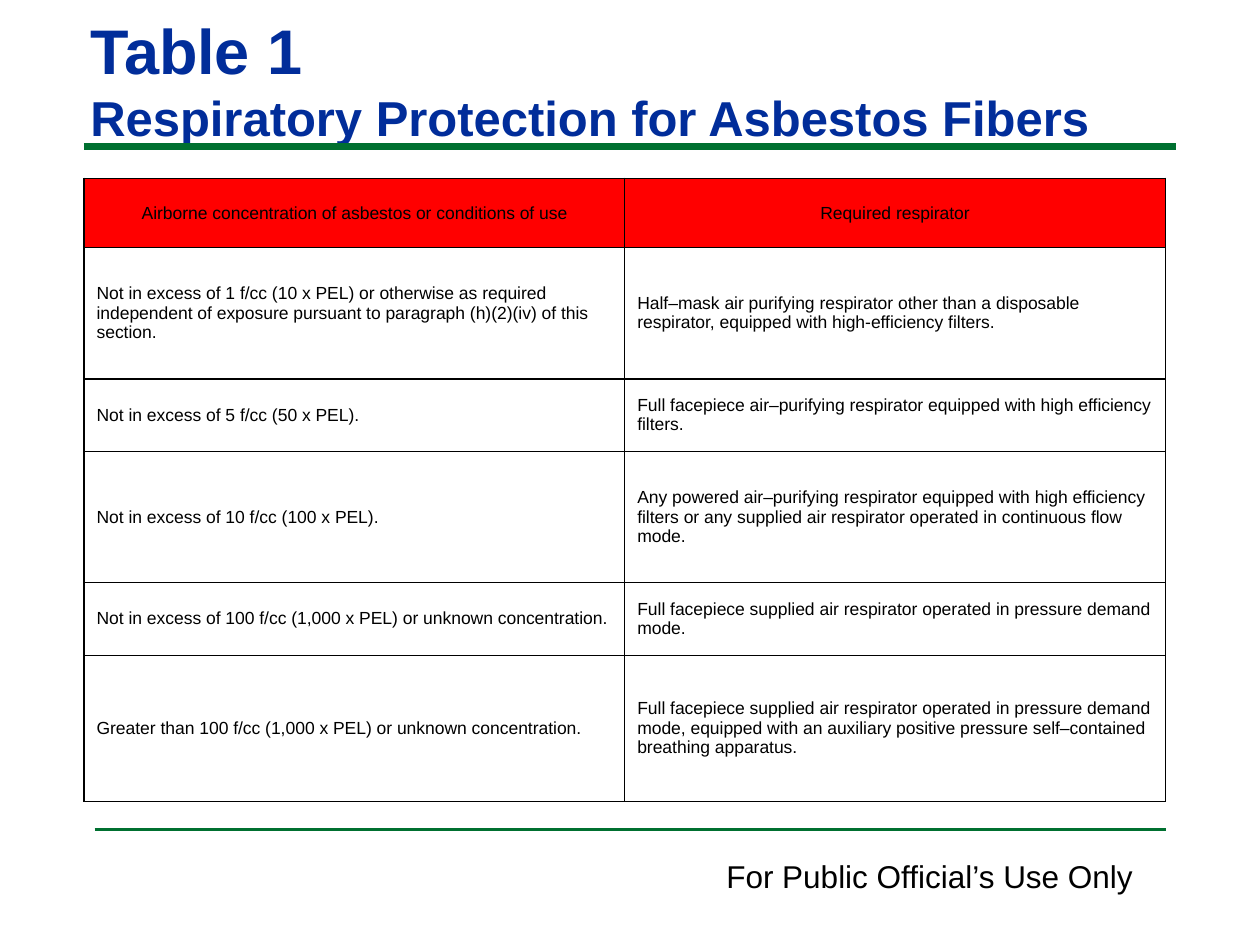
from lxml import etree
from pptx import Presentation
from pptx.dml.color import RGBColor
from pptx.enum import shapes, text
from pptx.oxml import ns
from pptx.util import Pt

THEME = {
    "font": "Arial",
    "green": "007030", "blue": "012D9A", "black": "000000",
    "red": "FF0000", "white": "FFFFFF",
    "head": 36, "sub": 28, "foot": 18, "cell": 10,
}
TITLE = [("Table 1", "head"), ("Respiratory Protection for Asbestos Fibers", "sub")]
FOOTER = "For Public Official’s Use Only"
ROWS = [
    ("Airborne concentration of asbestos or conditions of use",
     "Required respirator"),
    ("Not in excess of 1 f/cc (10 x PEL) or otherwise as required independent "
     "of exposure pursuant to paragraph (h)(2)(iv) of this section.",
     "Half–mask air purifying respirator other than a disposable respirator, "
     "equipped with high-efficiency filters."),
    ("Not in excess of 5 f/cc (50 x PEL).",
     "Full facepiece air–purifying respirator equipped with high efficiency filters."),
    ("Not in excess of 10 f/cc (100 x PEL).",
     "Any powered air–purifying respirator equipped with high efficiency filters "
     "or any supplied air respirator operated in continuous flow mode."),
    ("Not in excess of 100 f/cc (1,000 x PEL) or unknown concentration.",
     "Full facepiece supplied air respirator operated in pressure demand mode."),
    ("Greater than 100 f/cc (1,000 x PEL) or unknown concentration.",
     "Full facepiece supplied air respirator operated in pressure demand mode, "
     "equipped with an auxiliary positive pressure self–contained breathing apparatus."),
]
HEIGHTS = [39.5, 75, 41.5, 75, 41.5, 83.5]
RULES = [(48, 672, 84, 4), (54, 666, 474, 2)]
LEFT, TOP, WIDTH = 48, 102, 618


def color(name):
    return RGBColor.from_string(THEME[name])


def style(font, size, tone, bold=False):
    font.name = THEME["font"]
    font.size = Pt(THEME[size])
    font.color.rgb = color(tone)
    font.bold = bold


def add_rule(slide, start, end, y, weight):
    rule = slide.shapes.add_connector(
        shapes.MSO_CONNECTOR.STRAIGHT, Pt(start), Pt(y), Pt(end), Pt(y))
    rule.line.color.rgb = color("green")
    rule.line.width = Pt(weight)
    etree.SubElement(rule._element.spPr, ns.qn("a:effectLst"))


def set_title(slide):
    title = slide.shapes.title
    title.left, title.top, title.width, title.height = map(Pt, (LEFT, 6, 648, 77.5))
    frame = title.text_frame
    frame.auto_size = text.MSO_AUTO_SIZE.NONE
    frame.vertical_anchor = text.MSO_ANCHOR.BOTTOM
    frame.margin_left = frame.margin_right = Pt(3.6)
    frame.margin_top = frame.margin_bottom = 0
    para = frame.paragraphs[0]
    para.alignment = text.PP_ALIGN.LEFT
    for i, (words, size) in enumerate(TITLE):
        if i:
            para.add_line_break()
        run = para.add_run()
        run.text = words
        style(run.font, size, "blue", True)


def add_footer(slide):
    frame = slide.shapes.add_textbox(Pt(408), Pt(486), Pt(249), Pt(29)).text_frame
    frame.word_wrap = False
    para = frame.paragraphs[0]
    para.text = FOOTER
    style(para.font, "foot", "black")


def add_borders(cell):
    props = cell._tc.get_or_add_tcPr()
    for i, side in enumerate(("lnL", "lnR", "lnT", "lnB")):
        line = etree.Element(ns.qn("a:" + side), w=str(Pt(1)))
        fill = etree.SubElement(line, ns.qn("a:solidFill"))
        etree.SubElement(fill, ns.qn("a:srgbClr"), val=THEME["black"])
        props.insert(i, line)


def add_grid(slide):
    cols = len(ROWS[0])
    grid = slide.shapes.add_table(
        len(ROWS), cols, Pt(LEFT), Pt(TOP), Pt(WIDTH), Pt(sum(HEIGHTS))).table
    for col in grid.columns:
        col.width = Pt(WIDTH / cols)
    for r, (row, height) in enumerate(zip(ROWS, HEIGHTS)):
        grid.rows[r].height = Pt(height)
        for c, words in enumerate(row):
            cell = grid.cell(r, c)
            cell.vertical_anchor = text.MSO_ANCHOR.MIDDLE
            cell.fill.solid()
            cell.fill.fore_color.rgb = color("white" if r else "red")
            add_borders(cell)
            para = cell.text_frame.paragraphs[0]
            para.text = words
            para.alignment = text.PP_ALIGN.LEFT if r else text.PP_ALIGN.CENTER
            style(para.font, "cell", "black")


def main():
    deck = Presentation()
    deck.slide_width, deck.slide_height = Pt(720), Pt(540)
    slide = deck.slides.add_slide(deck.slide_layouts.get_by_name("Title Only"))
    for rule in RULES:
        add_rule(slide, *rule)
    add_footer(slide)
    set_title(slide)
    add_grid(slide)
    deck.save("out.pptx")


if __name__ == "__main__":
    main()
